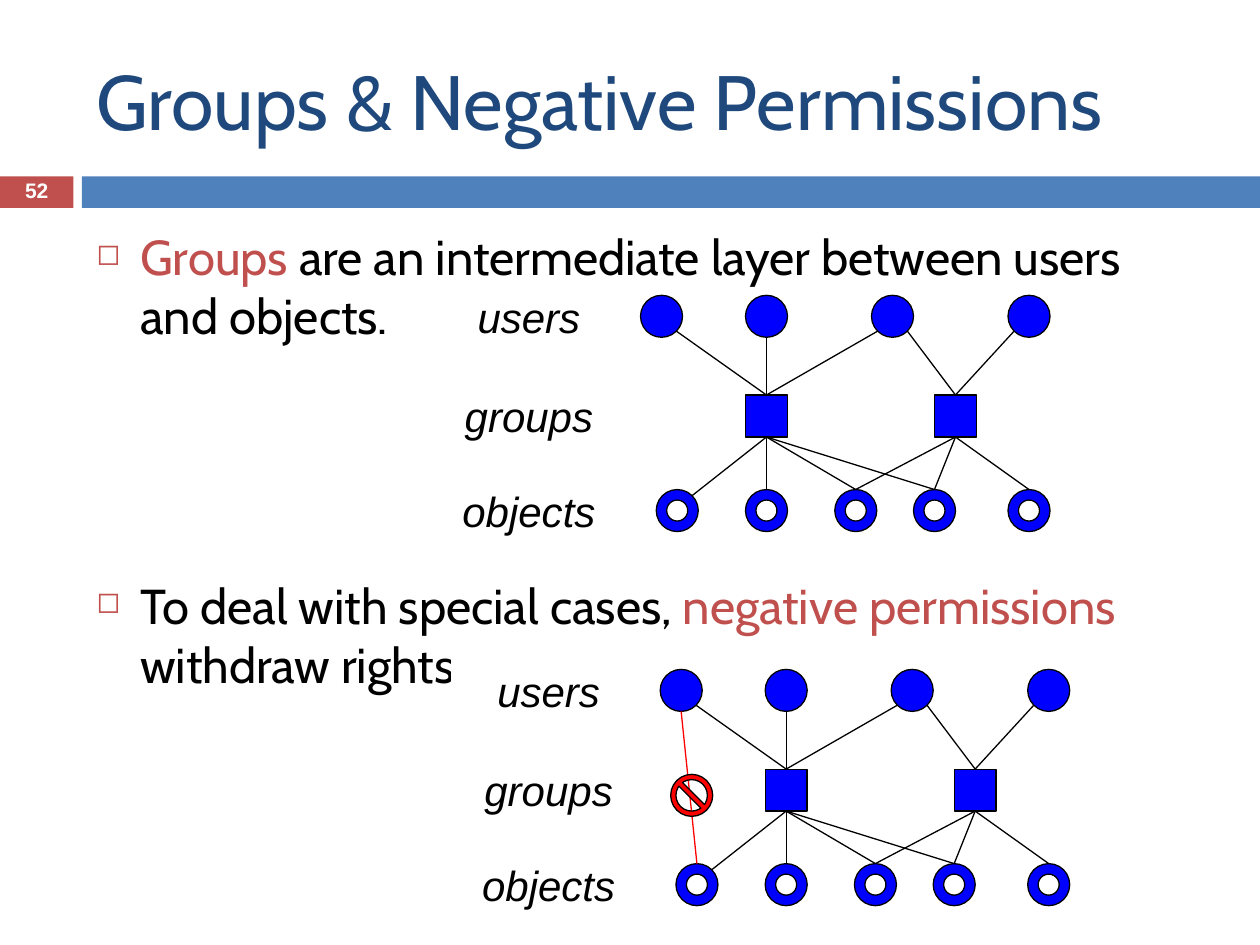
from math import sqrt

from lxml.etree import SubElement
from pptx import Presentation
from pptx.dml.color import RGBColor
from pptx.enum.shapes import MSO_CONNECTOR as Connector, MSO_SHAPE as Shape
from pptx.enum.text import MSO_ANCHOR as Anchor, PP_ALIGN as Align
from pptx.oxml.ns import qn
from pptx.util import Inches, Pt

color = RGBColor.from_string
BLACK, WHITE, RED, BLUE = "000000", "FFFFFF", "FF0000", "0000FF"
ACCENT = "C0504D"

presentation = Presentation()
presentation.slide_width = Inches(10)
presentation.slide_height = Inches(7.5)
slide = presentation.slides.add_slide(presentation.slide_layouts[6])
unit = presentation.slide_width / 240


def add_shape(kind, column, row, columns, rows, fill, line=None, weight=0.75):
    shape = slide.shapes.add_shape(kind, *(round(n * unit) for n in (column, row, columns, rows)))
    shape.shadow.inherit = False
    shape.fill.solid()
    shape.fill.fore_color.rgb = color(fill)
    if line:
        shape.line.color.rgb = color(line)
        shape.line.width = Pt(weight)
    else:
        shape.line.fill.background()
    return shape


def add_text(text, column, row, columns, rows, size, name, ink, align=Align.LEFT):
    box = slide.shapes.add_textbox(*(round(n * unit) for n in (column, row, columns, rows)))
    frame = box.text_frame
    frame.word_wrap = True
    frame.vertical_anchor = Anchor.MIDDLE
    paragraph = frame.paragraphs[0]
    paragraph.text = text
    paragraph.alignment = align
    paragraph.font.size = Pt(size)
    paragraph.font.name = name
    paragraph.font.color.rgb = color(ink)
    return paragraph


add_shape(Shape.RECTANGLE, 0, 33.6, 14, 6, ACCENT)
add_shape(Shape.RECTANGLE, 15.6, 33.6, 224.4, 6, "4F81BD")
add_text("Groups & Negative Permissions", 16, 6, 214, 26, 44, "Cabin", "1F497D")
number = add_text("52", 0, 33.4, 14, 6.4, 12, "Arial", WHITE, Align.CENTER)
number.font.bold = True
number.line_spacing = 0.8

bullets = [
    (0, [("Groups", ACCENT), (" are an intermediate layer between users and objects.", BLACK)]),
    (132, [("To deal with special cases, ", BLACK), ("negative permissions", ACCENT),
           (" withdraw rights", BLACK)]),
]
body = slide.shapes.add_textbox(*(round(n * unit) for n in (16, 42, 214, 118))).text_frame
body.word_wrap = True
for index, (space, runs) in enumerate(bullets):
    paragraph = body.add_paragraph() if index else body.paragraphs[0]
    paragraph.space_before = Pt(space)
    properties = paragraph._p.get_or_add_pPr()
    properties.set("marL", str(Inches(0.35)))
    properties.set("indent", str(-Inches(0.35)))
    bullet_color = SubElement(properties, qn("a:buClr"))
    SubElement(bullet_color, qn("a:srgbClr"), val=ACCENT)
    SubElement(properties, qn("a:buSzPct"), val="60000")
    SubElement(properties, qn("a:buChar"), char="◻")
    paragraph.font.size = Pt(28)
    paragraph.font.name = "Cabin"
    for text, ink in runs:
        run = paragraph.add_run()
        run.text = text
        run.font.color.rgb = color(ink)

NODE = 8
RADIUS = NODE / 2
DIAGONAL = RADIUS / sqrt(2)
layers = [
    ("users", Shape.OVAL, 0, [0, 20, 44, 70]),
    ("groups", Shape.RECTANGLE, 19, [20, 56]),
    ("objects", Shape.DONUT, 37, [3, 20, 37, 52, 70]),
]
users, groups, objects = [[column + RADIUS for column in layer[3]] for layer in layers]
user_row, group_row, object_row = [layer[2] + RADIUS for layer in layers]
memberships = [(0, 1, 0), (1, 0, 0), (2, -1, 0), (2, 1, 1), (3, -1, 1)]
permissions = [(0, 0, 1), (0, 1, 0), (0, 2, 0), (0, 3, 0), (1, 2, 0), (1, 3, 0), (1, 4, 0)]

edges = []
for user, side, group in memberships:
    drop = DIAGONAL if side else RADIUS
    edges.append((users[user] + side * DIAGONAL, user_row + drop,
                  groups[group], group_row - RADIUS, BLACK))
for group, target, side in permissions:
    rise = DIAGONAL if side else RADIUS
    edges.append((groups[group], group_row + RADIUS,
                  objects[target] + side * DIAGONAL, object_row - rise, BLACK))
denial = (users[0], user_row + RADIUS, objects[0], object_row - RADIUS, RED)

for left, top, denied in [(122, 56.25, False), (125.75, 127.5, True)]:
    if denied:
        add_shape(Shape.RECTANGLE, left - 39.6, top - 5.5, 120, 56, WHITE, WHITE, 1.5)
    for label, kind, row, columns in layers:
        for column in columns:
            add_shape(kind, left + column, top + row, NODE, NODE, BLUE, BLACK)
        caption = add_text(label, left - 39.25, top + row - 2, 36, 12, 24, "Arial", BLACK,
                           Align.CENTER)
        caption.font.italic = True
    for x1, y1, x2, y2, ink in edges + [denial] * denied:
        ends = (left + x1, top + y1, left + x2, top + y2)
        connector = slide.shapes.add_connector(Connector.STRAIGHT, *(round(n * unit) for n in ends))
        connector.line.color.rgb = color(ink)
        connector.line.width = Pt(0.75)
        SubElement(connector._element.spPr, qn("a:effectLst"))
    if denied:
        sign = add_shape(Shape.NO_SYMBOL, left + 2, top + 20, NODE, NODE, RED, BLACK)
        sign.adjustments[0] = 0.125

presentation.save("out.pptx")
